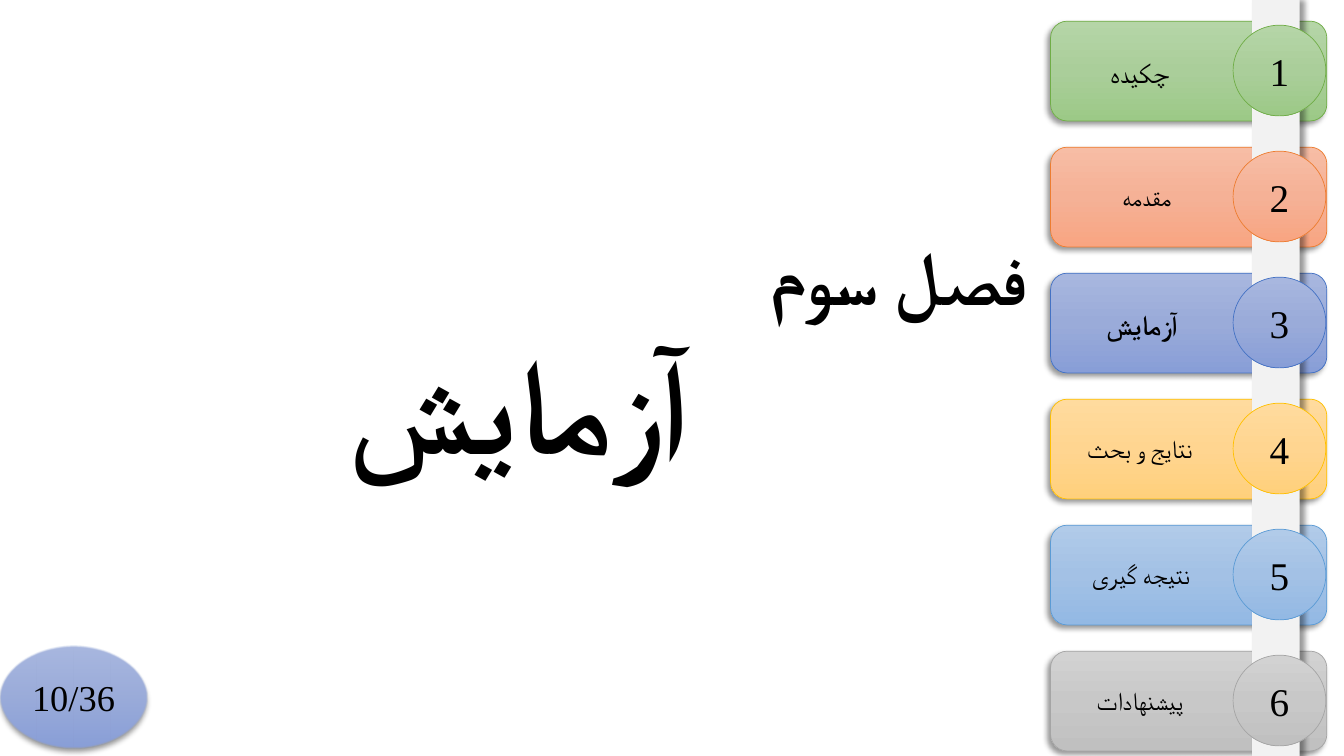
from collections import namedtuple
from dataclasses import dataclass

from lxml import etree
from pptx import Presentation
from pptx import util as u
from pptx.dml.color import RGBColor
from pptx.enum import shapes, text
from pptx.oxml.ns import qn

Box = namedtuple("Box", "left top width height")
Tone = namedtuple("Tone", "stops line")
Chapter = namedtuple("Chapter", "name tone left width size bold")


@dataclass(frozen=True)
class Theme:
    ink: str = "000000"
    band: str = "F2F2F2"
    label_font: str = "Calibri"
    number_font: str = "Times New Roman"
    heading: int = 54
    title: int = 96
    number: int = 28
    page: int = 26
    line: float = 0.5
    green: Tone = Tone(("B5D5A7", "AACE9A", "9CC987"), "70AD47")
    orange: Tone = Tone(("F7BDA5", "F5B196", "F8A582"), "ED7D31")
    blue: Tone = Tone(("A8B7DF", "9AABD9", "889ED7"), "4472C4")
    gold: Tone = Tone(("FFDB9E", "FFD590", "FFD07C"), "FFC000")
    sky: Tone = Tone(("B1CBE9", "A3C1E5", "93B9E4"), "5B9BD5")
    grey: Tone = Tone(("D2D2D2", "C8C8C8", "C0C0C0"), "A5A5A5")


T = Theme()
SLIDE = Box(0, 0, 13.33, 7.5)
SIDEBAR = Box(10.42, 0, 2.74, SLIDE.height)
CHAPTERS = [
    Chapter("چکیده", T.green, 0.15, 1.47, 20, False),
    Chapter("مقدمه", T.orange, 0.04, 1.83, 18, False),
    Chapter("آزمایش", T.blue, 0.06, 1.69, 20, True),
    Chapter("نتایج و بحث", T.gold, 0.04, 1.69, 18, False),
    Chapter("نتیجه گیری", T.sky, 0.05, 1.69, 18, False),
    Chapter("پیشنهادات", T.grey, 0.04, 1.69, 18, False),
]


def inches(box):
    return [u.Inches(v) for v in box]


def add_colour(parent, value):
    return etree.SubElement(parent, qn("a:srgbClr"), val=value)


def add_shadow(sp, direction):
    effects = sp._element.spPr.find(qn("a:effectLst"))
    shadow = etree.SubElement(
        effects, qn("a:outerShdw"), blurRad=str(u.Pt(4)), dist=str(u.Pt(3)),
        dir=str(direction * 60000), algn="ctr", rotWithShape="0")
    etree.SubElement(add_colour(shadow, T.ink), qn("a:alpha"), val="40000")
    return effects


def add_toned_shape(slide, kind, box, tone):
    sp = slide.shapes.add_shape(kind, *inches(box))
    sp.shadow.inherit = False
    sp.fill.gradient()
    sp.fill.gradient_angle = 270
    stops = sp._element.spPr.find(qn("a:gradFill")).find(qn("a:gsLst"))
    for stop in list(stops):
        stops.remove(stop)
    for i, value in enumerate(tone.stops):
        add_colour(etree.SubElement(stops, qn("a:gs"), pos=str(i * 50000)), value)
    sp.line.color.rgb = RGBColor.from_string(tone.line)
    sp.line.width = u.Pt(T.line)
    return sp


def format_paragraph(p, size, font, bold=False, rtl=False,
                     align=text.PP_ALIGN.CENTER):
    p.alignment = align
    if rtl:
        p._p.get_or_add_pPr().set("rtl", "1")
    for r in p.runs:
        r.font.size = u.Pt(size)
        r.font.name = font
        r.font.bold = bold
        r.font.color.rgb = RGBColor.from_string(T.ink)
        if rtl:
            etree.SubElement(r._r.get_or_add_rPr(), qn("a:cs"), typeface=font)


def add_disc(slide, box, tone, label, size):
    sp = add_toned_shape(slide, shapes.MSO_SHAPE.FLOWCHART_CONNECTOR, box, tone)
    tf = sp.text_frame
    tf.text = label
    tf.vertical_anchor = text.MSO_ANCHOR.MIDDLE
    format_paragraph(tf.paragraphs[0], size, T.number_font)
    return sp


def add_sidebar(slide, box, chapters):
    pitch = box.height / len(chapters)
    tops = [box.top + i * pitch for i in range(len(chapters))]

    for top, chapter in zip(tops, chapters):
        card = add_toned_shape(slide, shapes.MSO_SHAPE.ROUNDED_RECTANGLE,
                               Box(box.left, top + 0.21, box.width, 0.99),
                               chapter.tone)
        add_shadow(card, 135)

    band = slide.shapes.add_shape(
        shapes.MSO_SHAPE.RECTANGLE,
        *inches(Box(box.left + 2, box.top, 0.47, box.height + 0.26)))
    band.shadow.inherit = False
    band.fill.solid()
    band.fill.fore_color.rgb = RGBColor.from_string(T.band)
    band.line.fill.background()
    add_shadow(band, 0)

    for i, (top, chapter) in enumerate(zip(tops, chapters), 1):
        add_disc(slide, Box(box.left + 1.81, top + 0.25, 0.92, 0.9),
                 chapter.tone, str(i), T.number)

    for top, chapter in zip(tops, chapters):
        height = 0.1 + chapter.size / 60
        label = slide.shapes.add_textbox(*inches(
            Box(box.left + chapter.left, top + 0.5, chapter.width, height)))
        tf = label.text_frame
        tf.word_wrap = True
        tf.text = chapter.name
        format_paragraph(tf.paragraphs[0], chapter.size, T.label_font,
                         chapter.bold, rtl=True)


def add_page_badge(slide, box, label):
    badge = add_disc(slide, box, T.blue, label, T.page)
    effects = add_shadow(badge, 90)
    etree.SubElement(effects, qn("a:softEdge"), rad=str(u.Pt(1)))


def fill_title(slide, box, heading, title):
    sp = slide.shapes.title
    sp.left, sp.top, sp.width, sp.height = inches(box)
    tf = sp.text_frame
    tf.text = f"{heading}\n{title}"
    tf.word_wrap = True
    tf.auto_size = text.MSO_AUTO_SIZE.NONE
    tf.vertical_anchor = text.MSO_ANCHOR.MIDDLE
    tf.margin_top = u.Inches(0.35)
    styles = [(T.heading, text.PP_ALIGN.RIGHT), (T.title, text.PP_ALIGN.CENTER)]
    for p, (size, align) in zip(tf.paragraphs, styles):
        p.line_spacing = 1.0
        p.space_before = u.Pt(0)
        format_paragraph(p, size, T.label_font, True, True, align)


def main():
    prs = Presentation()
    prs.slide_width = u.Inches(SLIDE.width)
    prs.slide_height = u.Inches(SLIDE.height)
    slide = prs.slides.add_slide(prs.slide_layouts.get_by_name("Title Only"))
    fill_title(slide, Box(0, 0.14, 10.29, 6.48), "فصل سوم", "آزمایش")
    add_sidebar(slide, SIDEBAR, CHAPTERS)
    add_page_badge(slide, Box(0, 6.41, 1.46, 1.01), "10/36")
    prs.save("out.pptx")


if __name__ == "__main__":
    main()
